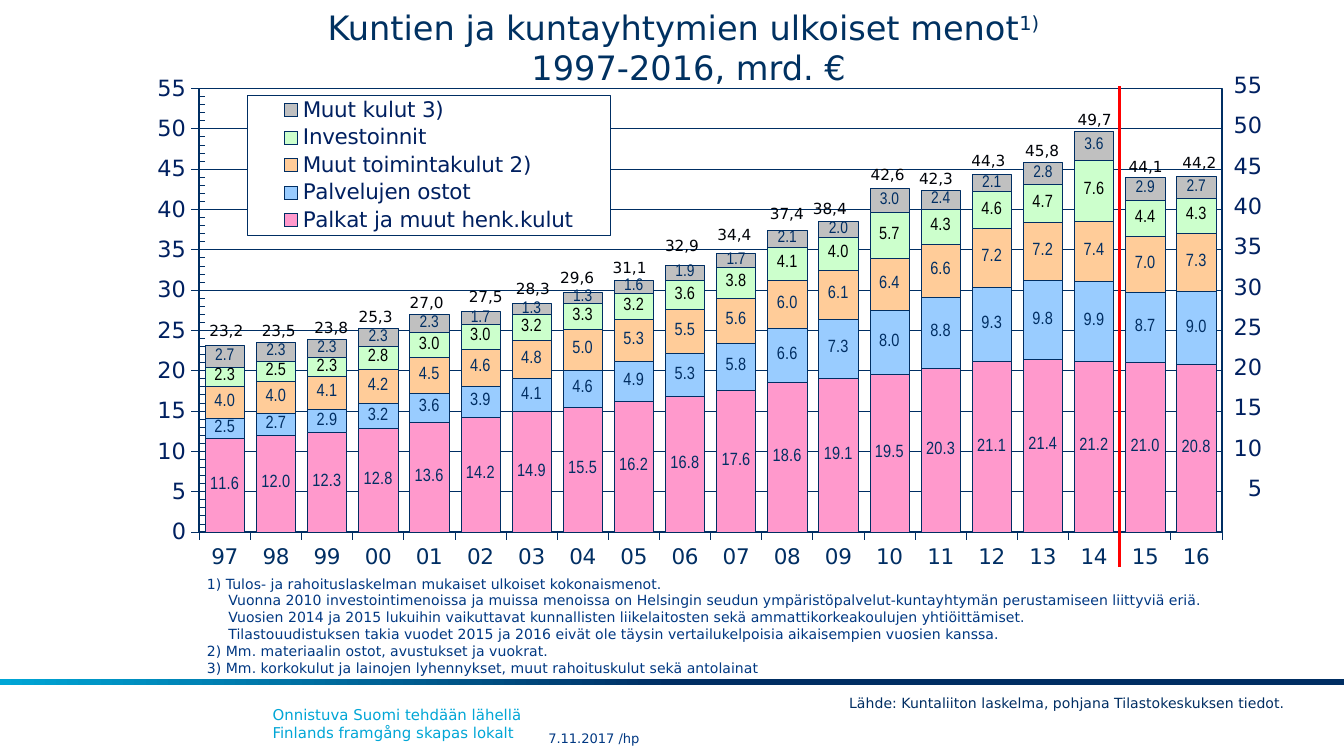
from lxml import etree
from pptx import Presentation
from pptx.chart.data import CategoryChartData
from pptx.dml.color import RGBColor
from pptx.enum.chart import XL_CHART_TYPE, XL_LABEL_POSITION, XL_LEGEND_POSITION, XL_TICK_MARK
from pptx.enum.shapes import MSO_CONNECTOR, MSO_SHAPE
from pptx.enum.text import MSO_ANCHOR, PP_ALIGN
from pptx.oxml import parse_xml
from pptx.oxml.ns import nsdecls, qn
from pptx.util import Inches, Pt

NAVY = RGBColor(0x00, 0x2E, 0x63)
TITLE = RGBColor(0x00, 0x31, 0x61)
AXIS = RGBColor(0x00, 0x20, 0x60)
NOTE = RGBColor(0x00, 0x38, 0x82)
CYAN = RGBColor(0x00, 0xA6, 0xD6)
INK = RGBColor(0x00, 0x03, 0x08)
BLACK = RGBColor(0x00, 0x00, 0x00)
RED = RGBColor(0xFF, 0x00, 0x00)
PINK = RGBColor(0xFF, 0x99, 0xCC)
BLUE = RGBColor(0x99, 0xCC, 0xFF)
PEACH = RGBColor(0xFF, 0xCC, 0x99)
GREEN = RGBColor(0xCC, 0xFF, 0xCC)
GRAY = RGBColor(0xC0, 0xC0, 0xC0)
FONT = "DejaVu Sans"

YEARS = [f"{y % 100:02d}" for y in range(1997, 2017)]
COSTS = [
    ("Palkat ja muut henk.kulut", PINK, NAVY, 9.5,
     [11.6, 12, 12.3, 12.8, 13.6, 14.2, 14.9, 15.5, 16.2, 16.8,
      17.6, 18.6, 19.1, 19.5, 20.3, 21.1, 21.4, 21.2, 21, 20.8]),
    ("Palvelujen ostot", BLUE, NAVY, 9.5,
     [2.5, 2.7, 2.9, 3.2, 3.6, 3.9, 4.1, 4.6, 4.9, 5.3,
      5.8, 6.6, 7.3, 8, 8.8, 9.3, 9.8, 9.9, 8.7, 9]),
    ("Muut toimintakulut 2)", PEACH, NAVY, 9.5,
     [4, 4, 4.1, 4.2, 4.5, 4.6, 4.8, 5, 5.3, 5.5,
      5.6, 6, 6.1, 6.4, 6.6, 7.2, 7.2, 7.4, 7, 7.3]),
    ("Investoinnit", GREEN, BLACK, 9.5,
     [2.3, 2.5, 2.3, 2.8, 3, 3, 3.2, 3.3, 3.2, 3.6,
      3.8, 4.1, 4, 5.7, 4.3, 4.6, 4.7, 7.6, 4.4, 4.3]),
    ("Muut kulut 3)", GRAY, NAVY, 9,
     [2.7, 2.3, 2.3, 2.3, 2.3, 1.7, 1.3, 1.3, 1.6, 1.9,
      1.7, 2.1, 2, 3, 2.4, 2.1, 2.8, 3.6, 2.9, 2.7]),
]
SUMS = [
    ("23,2", 0.47, 1.85), ("23,5", 0.86, 1.85), ("23,8", 1.25, 1.83), ("25,3", 1.58, 1.75),
    ("27,0", 1.96, 1.64), ("27,5", 2.40, 1.60), ("28,3", 2.75, 1.54), ("29,6", 3.08, 1.46),
    ("31,1", 3.47, 1.38), ("32,9", 3.86, 1.22), ("34,4", 4.25, 1.14), ("37,4", 4.64, 0.98),
    ("38,4", 4.96, 0.94), ("42,6", 5.39, 0.69), ("42,3", 5.75, 0.72), ("44,3", 6.14, 0.59),
    ("45,8", 6.54, 0.51), ("49,7", 6.93, 0.28), ("44,1", 7.31, 0.63), ("44,2", 7.71, 0.60),
]
NOTES = [
    ("1) Tulos- ja rahoituslaskelman mukaiset ulkoiset kokonaismenot.", 0),
    ("Vuonna 2010 investointimenoissa ja muissa menoissa on Helsingin seudun "
     "ympäristöpalvelut-kuntayhtymän perustamiseen liittyviä eriä.", 0.16),
    ("Vuosien 2014 ja 2015 lukuihin vaikuttavat kunnallisten liikelaitosten sekä "
     "ammattikorkeakoulujen yhtiöittämiset.", 0.16),
    ("Tilastouudistuksen takia vuodet 2015 ja 2016 eivät ole täysin vertailukelpoisia "
     "aikaisempien vuosien kanssa.", 0.16),
    ("2) Mm. materiaalin ostot, avustukset ja vuokrat.", 0),
    ("3) Mm. korkokulut ja lainojen lyhennykset, muut rahoituskulut sekä antolainat", 0),
]


def style(font, size, color, name=FONT):
    font.size, font.name, font.bold = Pt(size), name, False
    font.color.rgb = color


def label(slide, x, y, w, h, text, size, color, wrap=True, align=PP_ALIGN.LEFT):
    box = slide.shapes.add_textbox(Inches(x), Inches(y), Inches(w), Inches(h))
    frame = box.text_frame
    frame.word_wrap = wrap
    frame.text = text
    for para in frame.paragraphs:
        para.alignment = align
        style(para.font, size, color)
    return frame


def add_title(slide, x, y, w, h):
    title = slide.shapes.title
    title.left, title.top, title.width, title.height = map(Inches, (x, y, w, h))
    frame = title.text_frame
    frame.margin_left = frame.margin_right = 0
    frame.margin_top = frame.margin_bottom = Inches(0.05)
    frame.vertical_anchor = MSO_ANCHOR.BOTTOM
    para = frame.paragraphs[0]
    para.alignment = PP_ALIGN.CENTER
    style(para.font, 18, TITLE)
    para.add_run().text = "Kuntien ja kuntayhtymien ulkoiset menot"
    mark = para.add_run()
    mark.text = "1)"
    mark.font._element.set("baseline", "30000")
    para.add_line_break()
    para.add_run().text = " 1997-2016, mrd. €"


def layout(x, y, w, h, inner=False):
    root = etree.Element(qn("c:layout"))
    part = etree.SubElement(root, qn("c:manualLayout"))
    pairs = [("layoutTarget", "inner")] if inner else []
    pairs += [("xMode", "edge"), ("yMode", "edge"), ("x", x), ("y", y), ("w", w), ("h", h)]
    for tag, val in pairs:
        etree.SubElement(part, qn(f"c:{tag}")).set("val", str(val))
    return root


def frame_xml(fill, width):
    return parse_xml(f'<c:spPr {nsdecls("c", "a")}>{fill}<a:ln w="{Pt(width)}"><a:solidFill>'
                     f'<a:srgbClr val="{NAVY}"/></a:solidFill></a:ln></c:spPr>')


def set_line(line, width):
    line.color.rgb = NAVY
    line.width = Pt(width)


def add_bars(slide, x, y, w, h):
    data = CategoryChartData(number_format="0.0")
    data.categories = YEARS
    for name, _, _, _, vals in COSTS:
        data.add_series(name, vals)
    chart = slide.shapes.add_chart(XL_CHART_TYPE.COLUMN_STACKED, Inches(x), Inches(y),
                                   Inches(w), Inches(h), data).chart
    style(chart.font, 12, NAVY)
    chart.has_title = False
    plot = chart.plots[0]
    plot.gap_width, plot.overlap, plot.vary_by_categories = 30, 100, False
    for bar, (_, fill, ink, size, _) in zip(plot.series, COSTS):
        bar.format.fill.solid()
        bar.format.fill.fore_color.rgb = fill
        set_line(bar.format.line, 0.25)
        tags = bar.data_labels
        tags.show_value = True
        tags.number_format, tags.number_format_is_linked = "0.0", False
        tags.position = XL_LABEL_POSITION.CENTER
        style(tags.font, size, ink, "Arial Narrow")

    cat, val = chart.category_axis, chart.value_axis
    for axis, size, ink in ((cat, 11.5, NAVY), (val, 12, AXIS)):
        axis.major_tick_mark = XL_TICK_MARK.OUTSIDE
        set_line(axis.format.line, 0.3)
        style(axis.tick_labels.font, size, ink)
    val.minimum_scale, val.maximum_scale = 0, 55
    val.major_unit, val.minor_unit = 5, 1
    val.minor_tick_mark = XL_TICK_MARK.INSIDE
    val.tick_labels.number_format = "0"
    val.tick_labels.number_format_is_linked = False
    set_line(val.major_gridlines.format.line, 0.25)

    area = chart._chartSpace.chart.plotArea
    for old in area.findall(qn("c:layout")):
        area.remove(old)
    area.insert(0, layout(0.06, 0.044, 0.928, 0.864, True))
    area.append(frame_xml("<a:noFill/>", 1))

    chart.has_legend = True
    key = chart.legend
    key.position = XL_LEGEND_POSITION.RIGHT
    key.include_in_layout = False
    style(key.font, 11.5, AXIS)
    root = key._element
    for old in root.findall(qn("c:layout")):
        root.remove(old)
    root.find(qn("c:legendPos")).addnext(layout(0.85 / w, 0.22 / h, 2.7 / w, 1.04 / h))
    root.find(qn("c:overlay")).addnext(
        frame_xml('<a:solidFill><a:srgbClr val="FFFFFF"/></a:solidFill>', 0.25))


def add_marks(slide, x, y):
    for text, dx, dy in SUMS:
        label(slide, x + dx, y + dy, 0.46, 0.24, text, 8.2, INK, False)
    for i, tick in enumerate(range(55, 0, -5)):
        wide = 0.42 if tick > 9 else 0.31
        label(slide, x + 8.5 - wide, y - 0.01 + 0.3 * i, wide, 0.3, str(tick), 12, AXIS,
              False, PP_ALIGN.RIGHT)
    rule = slide.shapes.add_connector(MSO_CONNECTOR.STRAIGHT, Inches(x + 7.34),
                                      Inches(y + 3.73), Inches(x + 7.34), Inches(y + 0.15))
    rule.line.color.rgb = RED
    rule.line.width = Pt(1.25)
    etree.SubElement(rule._element.spPr, qn("a:effectLst"))


def add_notes(slide, x, y, w, h):
    frame = label(slide, x, y, w, h, "\n".join(text for text, _ in NOTES), 7.5, NOTE)
    frame.margin_left = Inches(0.13)
    for para, (_, dent) in zip(frame.paragraphs, NOTES):
        para._p.get_or_add_pPr().set("marL", str(Inches(dent)))


def add_foot(slide, x, y, w):
    band = slide.shapes.add_shape(MSO_SHAPE.RECTANGLE, Inches(x), Inches(y),
                                  Inches(w), Inches(0.05))
    band.shadow.inherit = False
    band.line.fill.background()
    band.fill.gradient()
    band.fill.gradient_angle = 180
    for stop, spot, color in zip(band.fill.gradient_stops, (0.5, 1), (NAVY, CYAN)):
        stop.position = spot
        stop.color.rgb = color
    label(slide, x + 1.93, y + 0.15, 6.54, 0.37,
          "Onnistuva Suomi tehdään lähellä\vFinlands framgång skapas lokalt", 8, CYAN)
    date = label(slide, x + 4.08, y + 0.35, 1.34, 0.18, "7.11.2017 /hp", 7, NOTE)
    date.margin_left = date.margin_right = date.margin_top = date.margin_bottom = 0
    date.vertical_anchor = MSO_ANCHOR.MIDDLE
    label(slide, x + 6.22, y + 0.07, 3.5, 0.23,
          "Lähde: Kuntaliiton laskelma, pohjana Tilastokeskuksen tiedot.", 7.5, NAVY)


def main():
    deck = Presentation()
    deck.slide_width = Inches(10)
    deck.slide_height = deck.slide_width * 9 // 16
    slide = deck.slides.add_slide(deck.slide_layouts[5])
    add_foot(slide, 0, 5.05, 10)
    add_title(slide, 1.75, 0.04, 6.67, 0.66)
    add_bars(slide, 0.99, 0.49, 8.2, 3.82)
    add_notes(slide, 1.41, 4.23, 8.03, 0.86)
    add_marks(slide, 0.99, 0.49)
    deck.save("out.pptx")


if __name__ == "__main__":
    main()
